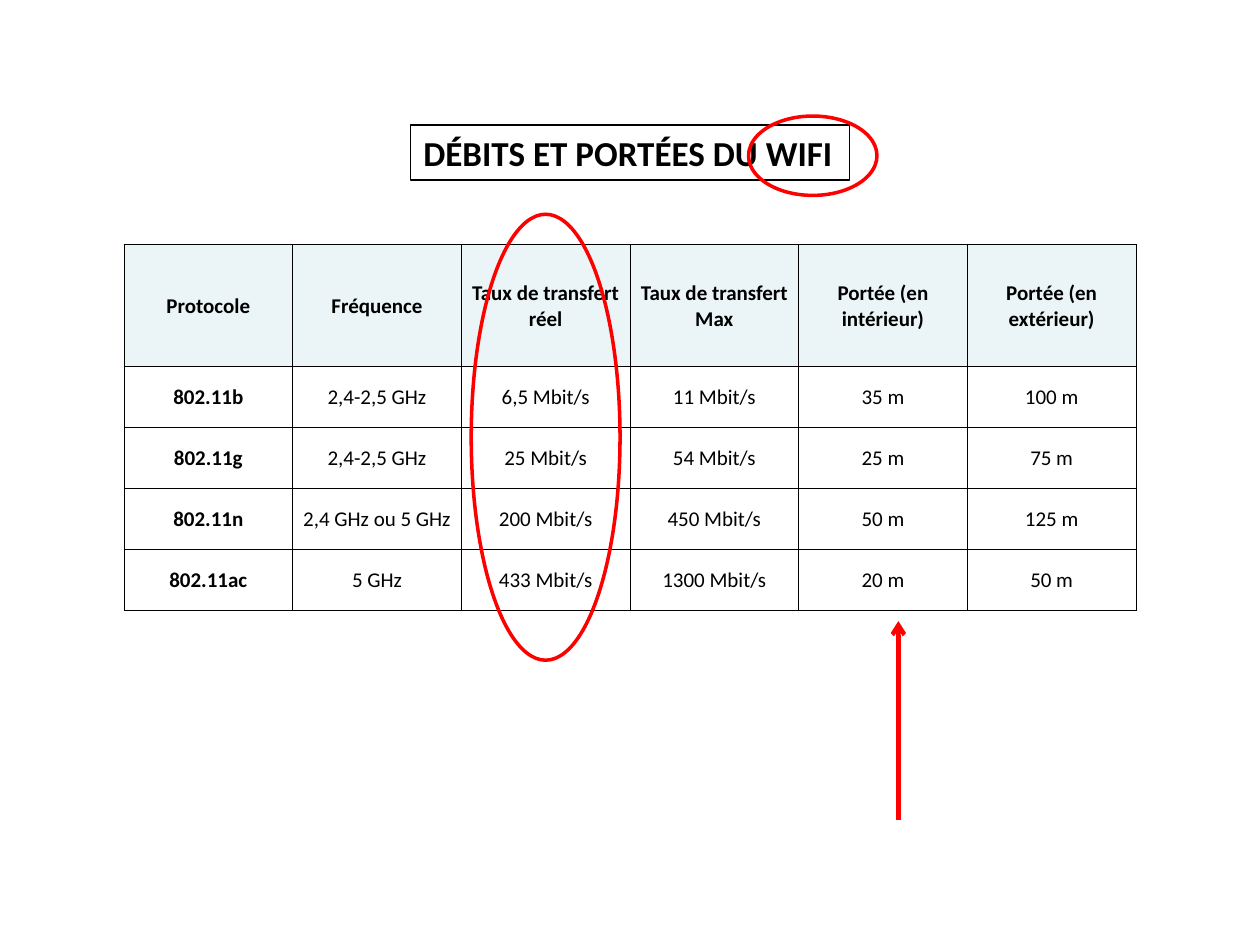
from lxml.etree import SubElement
from pptx import Presentation
from pptx.dml.color import RGBColor
from pptx.enum.shapes import MSO_CONNECTOR, MSO_SHAPE
from pptx.enum.text import MSO_ANCHOR, MSO_AUTO_SIZE, PP_ALIGN
from pptx.oxml.ns import qn
from pptx.util import Cm, Pt

COLORS = {"text": "000000", "header": "EBF5F8", "body": "FFFFFF", "mark": "FF0000"}
ROWS = [
    ["Protocole", "Fréquence", "Taux de transfert réel", "Taux de transfert Max",
     "Portée (en intérieur)", "Portée (en extérieur)"],
    ["802.11b", "2,4-2,5 GHz", "6,5 Mbit/s", "11 Mbit/s", "35 m", "100 m"],
    ["802.11g", "2,4-2,5 GHz", "25 Mbit/s", "54 Mbit/s", "25 m", "75 m"],
    ["802.11n", "2,4 GHz ou 5 GHz", "200 Mbit/s", "450 Mbit/s", "50 m", "125 m"],
    ["802.11ac", "5 GHz", "433 Mbit/s", "1300 Mbit/s", "20 m", "50 m"],
]
COLUMN_WIDTH = 3.4
ROW_HEIGHT = 1.23


def color(name):
    return RGBColor.from_string(COLORS[name])


def format_text(paragraph, size, bold, align):
    paragraph.alignment = align
    paragraph.font.name = "Calibri"
    paragraph.font.size = Pt(size)
    paragraph.font.bold = bold
    paragraph.font.color.rgb = color("text")


deck = Presentation()
deck.slide_width, deck.slide_height = Cm(25.4), Cm(19.05)
page = deck.slides.add_slide(deck.slide_layouts[5])

# Framed title
title = page.shapes.title
title.left, title.top, title.width, title.height = Cm(8.28), Cm(2.52), Cm(8.84), Cm(1.11)
title.line.color.rgb = color("text")
title.line.width = Pt(0.75)
frame = title.text_frame
frame.text = "DÉBITS ET PORTÉES DU WIFI"
frame.auto_size = MSO_AUTO_SIZE.NONE
frame.word_wrap = False
frame.vertical_anchor = MSO_ANCHOR.MIDDLE
format_text(frame.paragraphs[0], 20, True, PP_ALIGN.LEFT)

# Protocol table, with a header twice as high as the other rows
table = page.shapes.add_table(
    len(ROWS), len(ROWS[0]), Cm(2.5), Cm(4.93),
    Cm(COLUMN_WIDTH * len(ROWS[0])), Cm(ROW_HEIGHT * (len(ROWS) + 1))).table
for column in table.columns:
    column.width = Cm(COLUMN_WIDTH)
for r, values in enumerate(ROWS):
    table.rows[r].height = Cm(ROW_HEIGHT * (2 if r == 0 else 1))
    for c, value in enumerate(values):
        cell = table.cell(r, c)
        cell.text = value
        cell.vertical_anchor = MSO_ANCHOR.MIDDLE
        cell.margin_left = cell.margin_right = cell.margin_top = Cm(0.02)
        cell.margin_bottom = 0
        format_text(cell.text_frame.paragraphs[0], 12, r == 0 or c == 0, PP_ALIGN.CENTER)
        properties = cell._tc.get_or_add_tcPr()
        for side in ("lnL", "lnR", "lnT", "lnB"):
            border = SubElement(properties, qn(f"a:{side}"), w=str(Pt(0.5)))
            fill = SubElement(border, qn("a:solidFill"))
            SubElement(fill, qn("a:srgbClr"), val=COLORS["text"])
        cell.fill.solid()
        cell.fill.fore_color.rgb = color("header" if r == 0 else "body")

# Red rings around the real rate column and the word WIFI
for left, top, width, height in [(9.5, 4.32, 3, 8.99), (15.09, 2.34, 2.59, 1.6)]:
    ring = page.shapes.add_shape(MSO_SHAPE.OVAL, Cm(left), Cm(top), Cm(width), Cm(height))
    ring.shadow.inherit = False
    ring.fill.background()
    ring.line.color.rgb = color("mark")
    ring.line.width = Pt(2)

# Arrow up to the indoor range column
arrow = page.shapes.add_connector(
    MSO_CONNECTOR.STRAIGHT, Cm(18.11), Cm(16.54), Cm(18.11), Cm(12.52))
arrow.line.color.rgb = color("mark")
arrow.line.width = Pt(2.5)
SubElement(arrow.line._get_or_add_ln(), qn("a:tailEnd"), type="arrow")
SubElement(arrow._element.spPr, qn("a:effectLst"))

deck.save("out.pptx")
